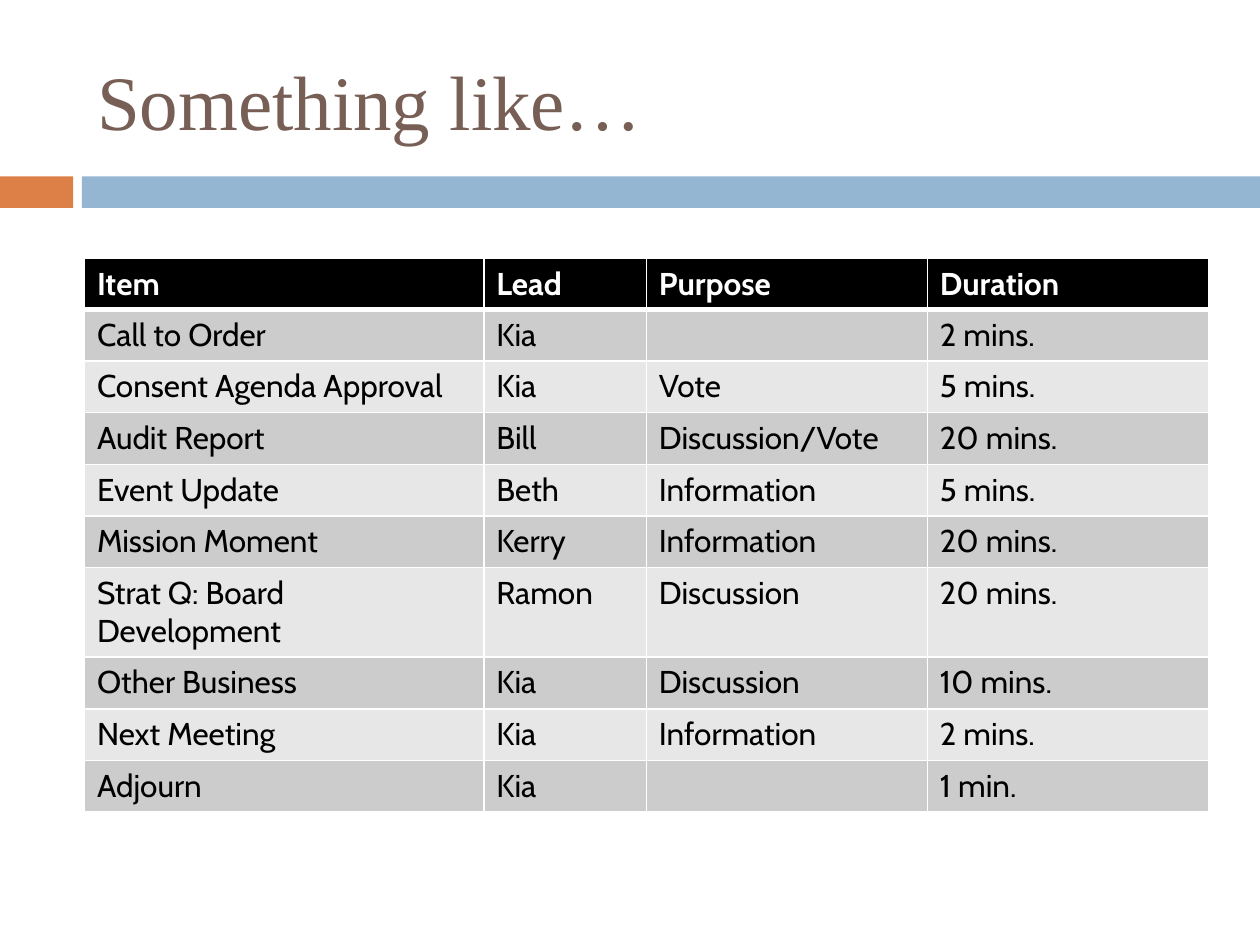
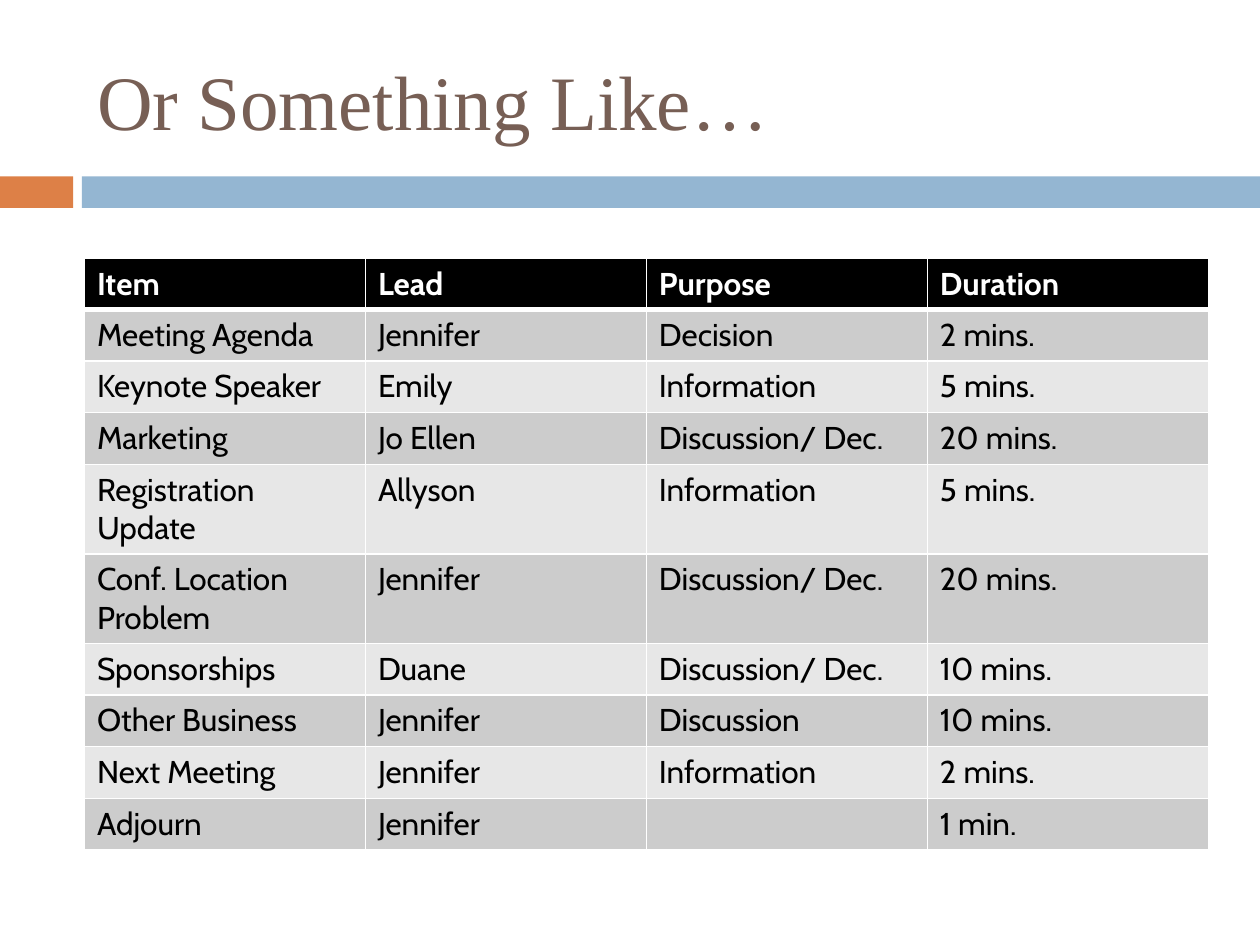
from dataclasses import dataclass

from lxml import etree
from pptx import Presentation
from pptx.dml.color import RGBColor
from pptx.enum.shapes import MSO_SHAPE
from pptx.enum.text import MSO_ANCHOR, PP_ALIGN
from pptx.oxml.ns import qn
from pptx.util import Inches, Pt

HEADINGS = ("Item", "Lead", "Purpose", "Duration")
AGENDAS = [
    {
        "title": "Something like…",
        "widths": (3.17, 1.29, 2.23, 2.23),
        "items": [
            ("Call to Order", "Kia", "", "2 mins."),
            ("Consent Agenda Approval", "Kia", "Vote", "5 mins."),
            ("Audit Report", "Bill", "Discussion/Vote", "20 mins."),
            ("Event Update", "Beth", "Information", "5 mins."),
            ("Mission Moment", "Kerry", "Information", "20 mins."),
            ("Strat Q: Board Development", "Ramon", "Discussion", "20 mins."),
            ("Other Business", "Kia", "Discussion", "10 mins."),
            ("Next Meeting", "Kia", "Information", "2 mins."),
            ("Adjourn", "Kia", "", "1 min."),
        ],
    },
    {
        "title": "Or Something Like…",
        "widths": (2.23,) * 4,
        "items": [
            ("Meeting Agenda", "Jennifer", "Decision", "2 mins."),
            ("Keynote Speaker", "Emily", "Information", "5 mins."),
            ("Marketing", "Jo Ellen", "Discussion/ Dec.", "20 mins."),
            ("Registration Update", "Allyson", "Information", "5 mins."),
            ("Conf. Location Problem", "Jennifer", "Discussion/ Dec.", "20 mins."),
            ("Sponsorships", "Duane", "Discussion/ Dec.", "10 mins."),
            ("Other Business", "Jennifer", "Discussion", "10 mins."),
            ("Next Meeting", "Jennifer", "Information", "2 mins."),
            ("Adjourn", "Jennifer", "", "1 min."),
        ],
    },
]


@dataclass(frozen=True)
class Theme:
    title_font: str = "Times New Roman"
    body_font: str = "Cabin"
    title_size: int = 44
    body_size: int = 18
    title: str = "775F55"
    accent: str = "DD8047"
    band: str = "94B6D2"
    header: str = "000000"
    text: str = "000000"
    white: str = "FFFFFF"
    stripes: tuple = ("CCCCCC", "E7E7E7")
    rule: int = 1
    header_rule: int = 3


THEME = Theme()
LEFT, CONTENT_WIDTH = 0.67, 8.92
TABLE_TOP, HEADER_HEIGHT, ROW_HEIGHT = 2.05, 0.18, 0.41
BAND_TOP, BAND_HEIGHT = 1.4, 0.25
BANDS = ((0, 0.58, THEME.accent), (0.65, 9.35, THEME.band))


def write(frame, text, *, font, size, color, bold=False):
    frame.text = text
    paragraph = frame.paragraphs[0]
    paragraph.alignment = PP_ALIGN.LEFT
    for style in [paragraph.font] + [run.font for run in paragraph.runs]:
        style.name, style.size, style.bold = font, Pt(size), bold
        style.color.rgb = RGBColor.from_string(color)


def add_bands(slide):
    for left, width, color in BANDS:
        band = slide.shapes.add_shape(
            MSO_SHAPE.RECTANGLE, Inches(left), Inches(BAND_TOP),
            Inches(width), Inches(BAND_HEIGHT))
        band.shadow.inherit = False
        band.fill.solid()
        band.fill.fore_color.rgb = RGBColor.from_string(color)
        band.line.fill.background()


def set_title(slide, text):
    title = slide.shapes.title
    title.left, title.top = Inches(LEFT), Inches(0.25)
    title.width, title.height = Inches(CONTENT_WIDTH), Inches(1.08)
    title.text_frame.vertical_anchor = MSO_ANCHOR.MIDDLE
    write(title.text_frame, text, font=THEME.title_font,
          size=THEME.title_size, color=THEME.title)


def set_borders(cell, top, bottom):
    """Rule the cell in white; top and bottom are widths in points."""
    properties = cell._tc.get_or_add_tcPr()
    edges = {"L": THEME.rule, "R": THEME.rule, "T": top, "B": bottom}
    for edge, points in edges.items():
        line = etree.SubElement(properties, qn(f"a:ln{edge}"), w=str(Pt(points)))
        fill = etree.SubElement(line, qn("a:solidFill"))
        etree.SubElement(fill, qn("a:srgbClr"), val=THEME.white)


def add_agenda(slide, widths, items):
    rows = [HEADINGS, *items]
    heights = [HEADER_HEIGHT] + [ROW_HEIGHT] * len(items)
    table = slide.shapes.add_table(
        len(rows), len(HEADINGS), Inches(LEFT), Inches(TABLE_TOP),
        Inches(CONTENT_WIDTH), Inches(sum(heights))).table
    for column, width in zip(table.columns, widths):
        column.width = Inches(width)
    for row, height in zip(table.rows, heights):
        row.height = Inches(height)

    for r, entries in enumerate(rows):
        is_header = r == 0
        background = THEME.header if is_header else THEME.stripes[(r - 1) % 2]
        top = THEME.header_rule if r == 1 else THEME.rule
        bottom = THEME.header_rule if is_header else THEME.rule
        for c, entry in enumerate(entries):
            cell = table.cell(r, c)
            set_borders(cell, top, bottom)
            cell.fill.solid()
            cell.fill.fore_color.rgb = RGBColor.from_string(background)
            write(cell.text_frame, entry, font=THEME.body_font,
                  size=THEME.body_size, bold=is_header,
                  color=THEME.white if is_header else THEME.text)


def main():
    deck = Presentation()
    deck.slide_width, deck.slide_height = Inches(10), Inches(7.5)
    title_only = deck.slide_layouts[5]
    for agenda in AGENDAS:
        slide = deck.slides.add_slide(title_only)
        add_bands(slide)
        set_title(slide, agenda["title"])
        add_agenda(slide, agenda["widths"], agenda["items"])
    deck.save("out.pptx")


if __name__ == "__main__":
    main()
